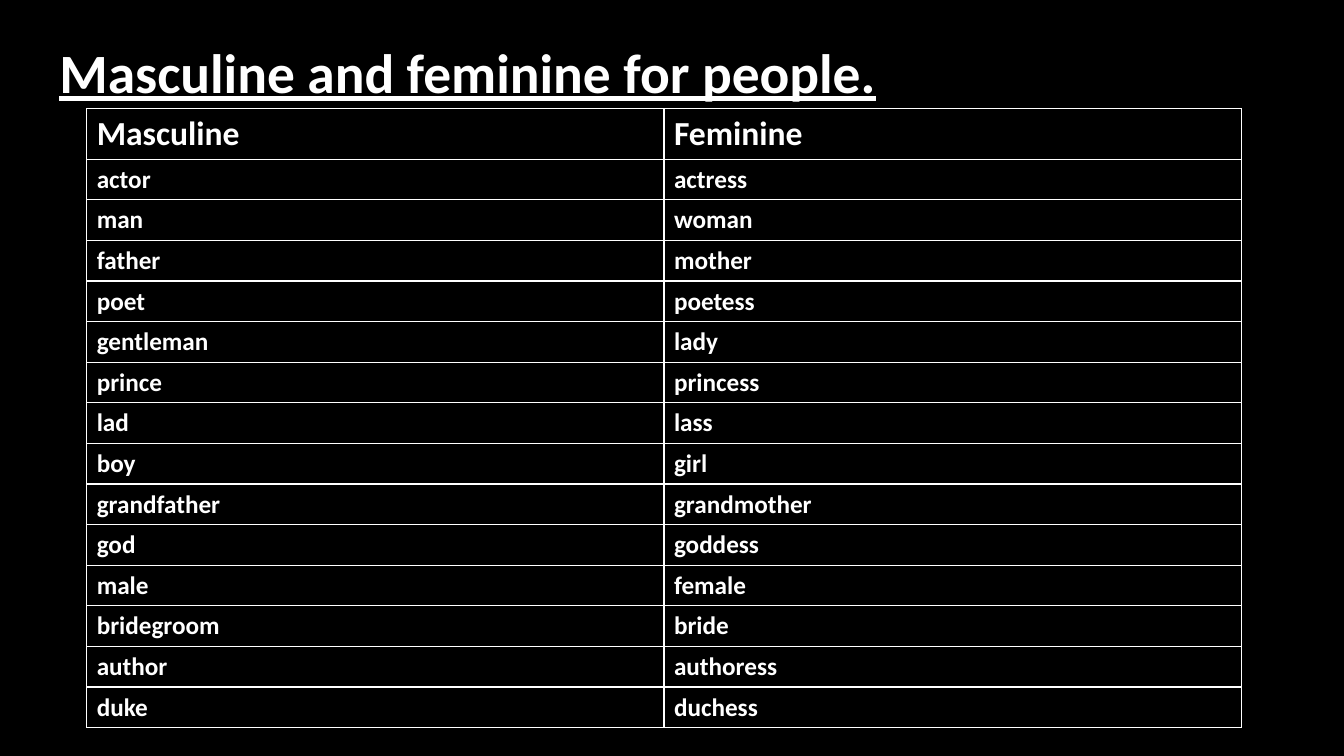
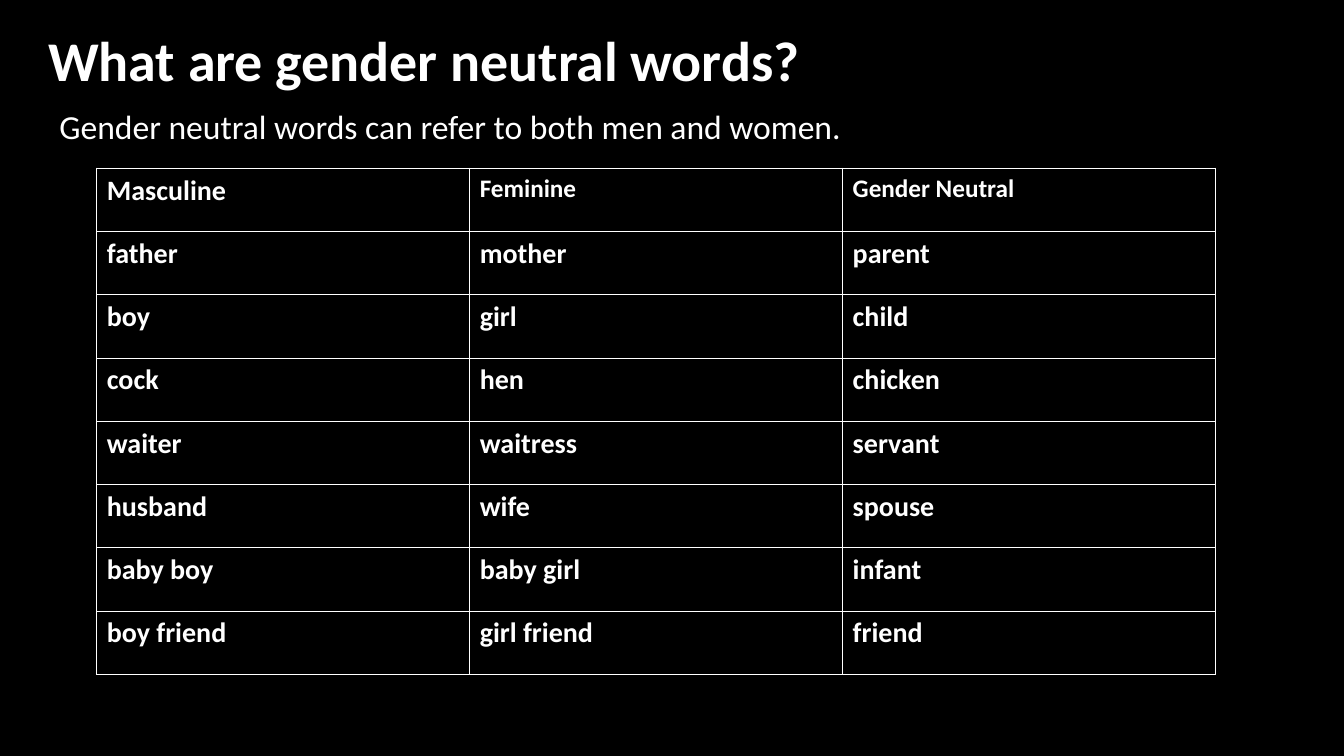
from dataclasses import dataclass

from lxml.etree import SubElement
from pptx import Presentation
from pptx.dml.color import RGBColor
from pptx.enum.text import MSO_ANCHOR
from pptx.oxml.ns import qn
from pptx.slide import Slide
from pptx.text.text import _Paragraph as Paragraph
from pptx.util import Inches, Pt

SLIDE_WIDTH = Inches(13.33)
SLIDE_HEIGHT = Inches(7.5)


@dataclass(frozen=True)
class Theme:
    background: str = "000000"
    ink: str = "FFFFFF"
    font: str = "Calibri"
    border: float = 1
    title: float = 40
    title_small: float = 39.6
    large: float = 24
    medium: float = 20
    small: float = 18


THEME = Theme()


@dataclass(frozen=True)
class Frame:
    """A rectangle in percent of the slide's width and height."""

    left: float
    top: float
    width: float
    height: float

    def lengths(self) -> tuple[int, int, int, int]:
        return (across(self.left), down(self.top),
                across(self.width), down(self.height))


@dataclass(frozen=True)
class TextStyle:
    size: float
    bold: bool = False
    underline: bool = False
    anchor: MSO_ANCHOR = MSO_ANCHOR.TOP
    line_spacing: float = 1.0


@dataclass(frozen=True)
class TextBlock:
    text: str
    frame: Frame
    style: TextStyle


@dataclass(frozen=True)
class WordTable:
    frame: Frame
    header_height: float
    header_sizes: tuple[float, ...]
    body_size: float
    rows: tuple[tuple[str, ...], ...]


@dataclass(frozen=True)
class Page:
    texts: tuple[TextBlock, ...]
    table: WordTable


def across(percent: float) -> int:
    return round(SLIDE_WIDTH * percent / 100)


def down(percent: float) -> int:
    return round(SLIDE_HEIGHT * percent / 100)


def title(text: str, frame: Frame, size: float, underline: bool = False) -> TextBlock:
    style = TextStyle(size, True, underline, MSO_ANCHOR.MIDDLE, 0.9)
    return TextBlock(text, frame, style)


# Content
PAGES = (
    Page(
        texts=(title("Masculine and feminine for people.",
                     Frame(3.68, 5.33, 89.4, 9.2), THEME.title_small, underline=True),),
        table=WordTable(
            frame=Frame(6.45, 14.4, 85.9, 81.33),
            header_height=6.13,
            header_sizes=(THEME.large, THEME.large),
            body_size=THEME.small,
            rows=(
                ("Masculine", "Feminine"),
                ("actor", "actress"),
                ("man", "woman"),
                ("father", "mother"),
                ("poet", "poetess"),
                ("gentleman", "lady"),
                ("prince", "princess"),
                ("lad", "lass"),
                ("boy", "girl"),
                ("grandfather", "grandmother"),
                ("god", "goddess"),
                ("male", "female"),
                ("bridegroom", "bride"),
                ("author", "authoress"),
                ("duke", "duchess"),
            ),
        ),
    ),
    Page(
        texts=(
            title("What are gender neutral words?",
                  Frame(2.85, 3.47, 86.25, 9.87), THEME.title),
            TextBlock("Gender neutral words can refer to both men and women.",
                      Frame(3.68, 13.33, 79.05, 6.67), TextStyle(THEME.large)),
        ),
        table=WordTable(
            frame=Frame(7.2, 22.27, 83.25, 66.96),
            header_height=8.37,
            header_sizes=(THEME.medium, THEME.small, THEME.small),
            body_size=THEME.medium,
            rows=(
                ("Masculine", "Feminine", "Gender Neutral"),
                ("father", "mother", "parent"),
                ("boy", "girl", "child"),
                ("cock", "hen", "chicken"),
                ("waiter", "waitress", "servant"),
                ("husband", "wife", "spouse"),
                ("baby boy", "baby girl", "infant"),
                ("boy friend", "girl friend", "friend"),
            ),
        ),
    ),
)


# Drawing
def add_span(para: Paragraph, text: str, style: TextStyle) -> None:
    para.line_spacing = style.line_spacing
    span = para.add_run()
    span.text = text
    font = span.font
    font.name = THEME.font
    font.size = Pt(style.size)
    font.bold = style.bold
    font.underline = style.underline
    font.color.rgb = RGBColor.from_string(THEME.ink)


def add_text(page: Slide, block: TextBlock) -> None:
    box = page.shapes.add_textbox(*block.frame.lengths())
    box.text_frame.word_wrap = True
    box.text_frame.vertical_anchor = block.style.anchor
    add_span(box.text_frame.paragraphs[0], block.text, block.style)


def add_borders(cell) -> None:
    properties = cell._tc.get_or_add_tcPr()
    for side in ("a:lnL", "a:lnR", "a:lnT", "a:lnB"):
        line = SubElement(properties, qn(side), w=str(Pt(THEME.border)))
        fill = SubElement(line, qn("a:solidFill"))
        SubElement(fill, qn("a:srgbClr"), val=THEME.ink)


def add_word_table(page: Slide, words: WordTable) -> None:
    row_count, column_count = len(words.rows), len(words.rows[0])
    table = page.shapes.add_table(row_count, column_count, *words.frame.lengths()).table
    table.first_row = table.horz_banding = False
    for column in table.columns:
        column.width = across(words.frame.width / column_count)
    body_height = (words.frame.height - words.header_height) / (row_count - 1)
    body_sizes = (words.body_size,) * column_count

    for index, texts in enumerate(words.rows):
        header = index == 0
        table.rows[index].height = down(words.header_height if header else body_height)
        sizes = words.header_sizes if header else body_sizes
        for cell, text, size in zip(table.rows[index].cells, texts, sizes):
            add_borders(cell)
            cell.fill.solid()
            cell.fill.fore_color.rgb = RGBColor.from_string(THEME.background)
            add_span(cell.text_frame.paragraphs[0], text, TextStyle(size, bold=True))


def main() -> None:
    deck = Presentation()
    deck.slide_width, deck.slide_height = SLIDE_WIDTH, SLIDE_HEIGHT
    blank = deck.slide_layouts.get_by_name("Blank")
    for content in PAGES:
        page = deck.slides.add_slide(blank)
        page.background.fill.solid()
        page.background.fill.fore_color.rgb = RGBColor.from_string(THEME.background)
        for block in content.texts:
            add_text(page, block)
        add_word_table(page, content.table)
    deck.save("out.pptx")


if __name__ == "__main__":
    main()
